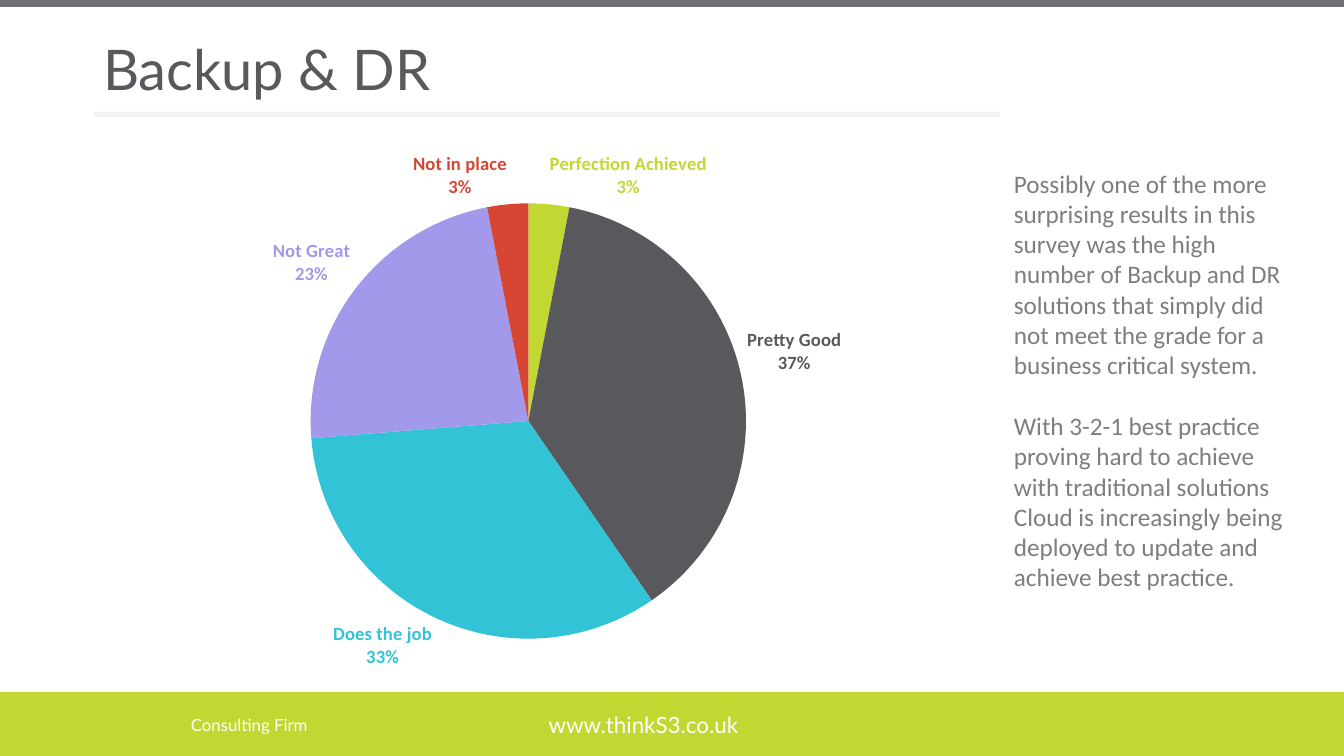
import pptx
import pptx.util
import pptx.chart.data
import pptx.oxml
import pptx.oxml.ns
from pptx.dml.color import RGBColor
from pptx.enum.chart import XL_CHART_TYPE, XL_LABEL_POSITION
from pptx.enum.shapes import MSO_SHAPE
from pptx.enum.text import MSO_ANCHOR, MSO_AUTO_SIZE, PP_ALIGN

EMU_PER_PX = 12192000 / 1344
COLOURS = {
    "lime": "C3D732", "charcoal": "59585D", "rule": "F2F2F2", "white": "FFFFFF",
    "grey": "7B7F82", "cyan": "33C3D7", "lilac": "A299EB", "red": "D74633",
}
RATINGS = [
    ("Perfection Achieved", 3, "lime"),
    ("Pretty Good", 37, "charcoal"),
    ("Does the job", 33, "cyan"),
    ("Not Great", 23, "lilac"),
    ("Not in place", 3, "red"),
]
COMMENTARY = [
    "Possibly one of the more surprising results in this survey was the high number of "
    "Backup and DR solutions that simply did not meet the grade for a business critical system.",
    "With 3-2-1 best practice proving hard to achieve with traditional solutions Cloud is "
    "increasingly being deployed to update and achieve best practice.",
]


def px(*lengths):
    return [pptx.util.Emu(round(length * EMU_PER_PX)) for length in lengths]


def rgb(name):
    return RGBColor.from_string(COLOURS[name])


def apply(target, formats):
    for attribute, value in formats.items():
        setattr(target, attribute, value)


def style_font(font, face, size, colour, bold=False):
    apply(font, {"name": face, "size": pptx.util.Pt(size), "bold": bold})
    font.color.rgb = rgb(colour)


def c_element(tag, value=None):
    element = pptx.oxml.parse_xml(f"<c:{tag} {pptx.oxml.ns.nsdecls('c')}/>")
    if value is not None:
        element.set("val", str(value))
    return element


def add_band(slide, box, colour, opacity=100):
    band = slide.shapes.add_shape(MSO_SHAPE.RECTANGLE, *px(*box))
    band.shadow.inherit = False
    band.fill.solid()
    band.fill.fore_color.rgb = rgb(colour)
    band.line.fill.background()
    if opacity < 100:
        srgb = band.fill._xPr.find(".//" + pptx.oxml.ns.qn("a:srgbClr"))
        srgb.append(pptx.oxml.parse_xml(
            f'<a:alpha {pptx.oxml.ns.nsdecls("a")} val="{opacity * 1000}"/>'))


def add_text(slide, box, paragraphs, face, size, colour, frame_format,
             align=PP_ALIGN.LEFT, gap=0):
    frame = slide.shapes.add_textbox(*px(*box)).text_frame
    apply(frame, {"word_wrap": True, **frame_format})
    for index, text in enumerate(paragraphs):
        paragraph = frame.add_paragraph() if index else frame.paragraphs[0]
        apply(paragraph, {"text": text, "alignment": align})
        if index:
            paragraph.space_before = pptx.util.Pt(gap)
        style_font(paragraph.font, face, size, colour)


def add_title(slide, box, text):
    title = slide.shapes.title
    apply(title, dict(zip(("left", "top", "width", "height"), px(*box))))
    apply(title.text_frame, {"text": text, "vertical_anchor": MSO_ANCHOR.MIDDLE,
                             "auto_size": MSO_AUTO_SIZE.NONE})
    heading = title.text_frame.paragraphs[0]
    apply(heading, {"alignment": PP_ALIGN.LEFT, "line_spacing": 0.9})
    style_font(heading.font, "Lato", 40, "charcoal")


def label_slice(point, colour):
    """Category name above its percentage, in the colour of the slice."""
    label = point.data_label
    style_font(label.font, "Calibri", 13.3, colour, bold=True)
    label.position = XL_LABEL_POSITION.OUTSIDE_END
    label_xml = label._dLbl
    number_format = c_element("numFmt")
    number_format.set("formatCode", "0%")
    number_format.set("sourceLinked", "0")
    label_xml.insert(1, number_format)
    for tag, shown in {"showVal": 0, "showCatName": 1, "showPercent": 1}.items():
        label_xml.find(pptx.oxml.ns.qn("c:" + tag)).set("val", str(shown))
    separator = c_element("separator")
    separator.text = "\n"
    label_xml.append(separator)


def place_plot(chart, fractions):
    plot_area = chart._chartSpace.chart.plotArea
    for old in plot_area.findall(pptx.oxml.ns.qn("c:layout")):
        plot_area.remove(old)
    layout, manual = c_element("layout"), c_element("manualLayout")
    manual.append(c_element("layoutTarget", "inner"))
    for tag in ("xMode", "yMode"):
        manual.append(c_element(tag, "edge"))
    for tag, value in zip("xywh", fractions):
        manual.append(c_element(tag, value))
    layout.append(manual)
    plot_area.insert(0, layout)


def add_pie(slide, box, ratings):
    data = pptx.chart.data.CategoryChartData()
    data.categories = [name for name, _, _ in ratings]
    data.add_series("Series 1", [share for _, share, _ in ratings])
    chart = slide.shapes.add_chart(XL_CHART_TYPE.PIE, *px(*box), data).chart
    apply(chart, {"has_legend": False, "has_title": False})
    style_font(chart.font, "Calibri", 10, "grey")
    place_plot(chart, (0.24, 0.12, 0.48, 0.78))
    pie = chart.plots[0]
    pie.vary_by_categories = True
    for index, (_, _, colour) in enumerate(ratings):
        point = pie.series[0].points[index]
        point.format.fill.solid()
        point.format.fill.fore_color.rgb = rgb(colour)
        point.format.line.fill.background()
        label_slice(point, colour)


def main():
    deck = pptx.Presentation()
    deck.slide_width, deck.slide_height = px(1344, 756)
    slide = deck.slides.add_slide(deck.slide_layouts[5])

    # Page furniture
    middle = {"vertical_anchor": MSO_ANCHOR.MIDDLE}
    add_band(slide, (0, 692, 1344, 64), "lime")
    add_band(slide, (0, 0, 1344, 7), "charcoal", opacity=85)
    add_band(slide, (94, 112, 906, 5), "rule")
    add_text(slide, (519, 705, 249, 40), ["www.thinkS3.co.uk"], "Lato", 16, "white",
             middle, align=PP_ALIGN.CENTER)
    add_text(slide, (181, 705, 249, 40), ["Consulting Firm"], "Lato", 12, "white", middle)

    # Title, survey results and commentary
    add_title(slide, (93, 40, 995, 65), "Backup & DR")
    add_pie(slide, (93, 136, 907, 559), RATINGS)
    add_text(slide, (1004, 163, 297, 468), COMMENTARY, "Calibri", 18, "grey",
             {"auto_size": MSO_AUTO_SIZE.SHAPE_TO_FIT_TEXT}, gap=22)

    deck.save("out.pptx")


if __name__ == "__main__":
    main()
